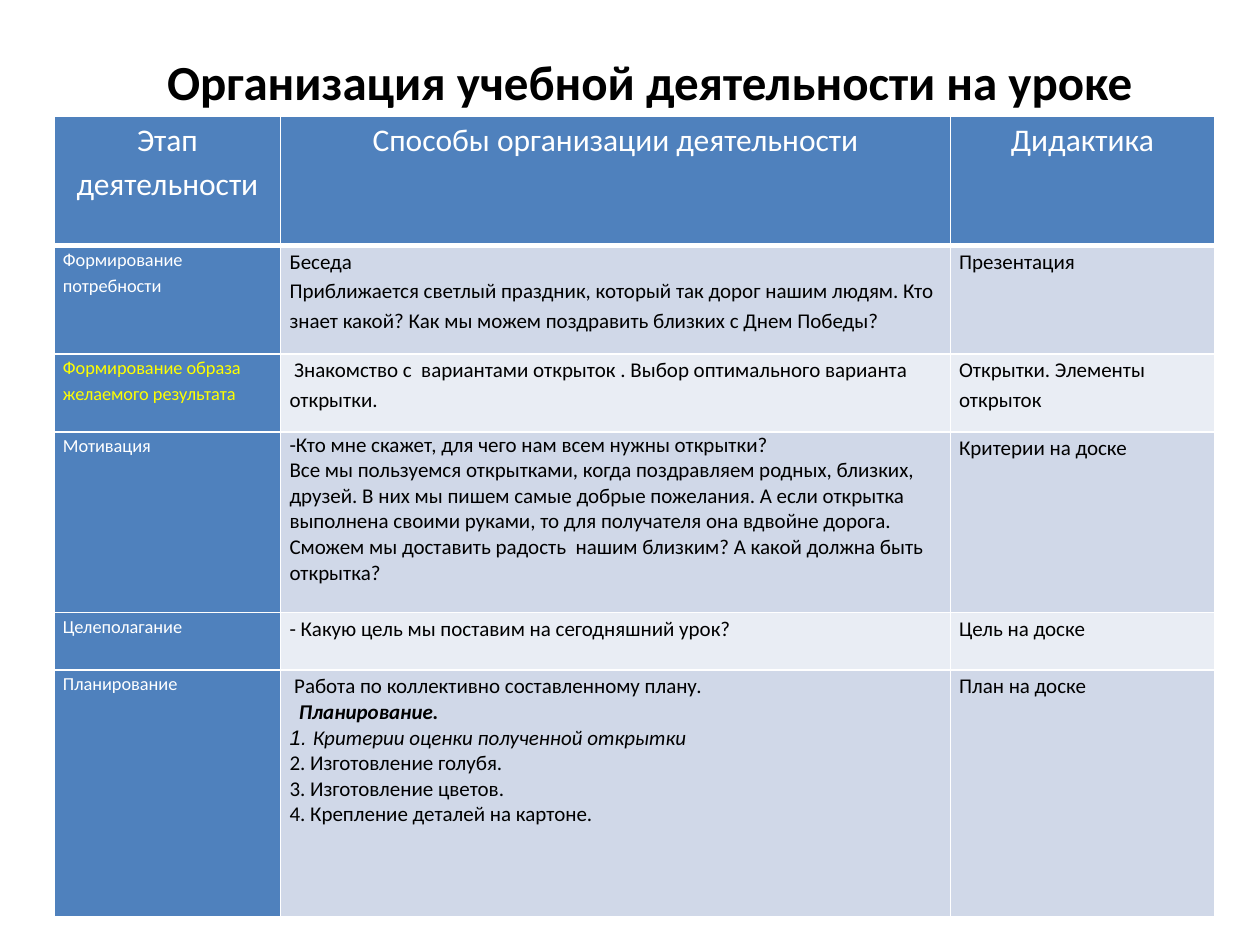
from lxml.etree import SubElement
from pptx import Presentation
from pptx.dml.color import RGBColor
from pptx.enum.text import MSO_AUTO_SIZE as AutoSize, PP_ALIGN as Align
from pptx.oxml.ns import qn
from pptx.util import Inches, Pt

BLACK = RGBColor(0x00, 0x00, 0x00)
WHITE = RGBColor(0xFF, 0xFF, 0xFF)
YELLOW = RGBColor(0xFF, 0xFF, 0x00)
BLUE = RGBColor(0x4F, 0x81, 0xBD)
BANDS = (RGBColor(0xD0, 0xD8, 0xE8), RGBColor(0xE9, 0xED, 0xF4))

SLIDE_SIZE = (Inches(10), Inches(7.5))
TITLE_BOX = (0.98, 0.36, 8.35, 0.57)
TABLE_BOX = (0.43, 0.92, 9.21, 6.36)
COLUMN_SHARES = (1.8, 5.32, 2.1)
ROW_SHARES = (1.03, 0.86, 0.62, 1.43, 0.46, 1.96)
LOOSE, SINGLE = 1.15, 1.0

TITLE = "Организация учебной деятельности на уроке"
HEADINGS = ("Этап деятельности", "Способы организации деятельности", "Дидактика")
STAGES = [
    ("Формирование потребности", WHITE, [
        (LOOSE, "Беседа"),
        (LOOSE, "Приближается светлый праздник, который так дорог нашим людям. "
                "Кто знает какой? Как мы можем поздравить близких с Днем Победы?"),
    ], "Презентация"),
    ("Формирование образа желаемого результата", YELLOW, [
        (LOOSE, " Знакомство с  вариантами открыток . Выбор оптимального варианта открытки."),
    ], "Открытки. Элементы открыток"),
    ("Мотивация", WHITE, [
        (SINGLE, "-Кто мне скажет, для чего нам всем нужны открытки?"),
        (SINGLE, "Все мы пользуемся открытками, когда поздравляем родных, близких, друзей. "
                 "В них мы пишем самые добрые пожелания. А если открытка выполнена своими "
                 "руками, то для получателя она вдвойне дорога. Сможем мы доставить радость  "
                 "нашим близким? А какой должна быть открытка?"),
    ], "Критерии на доске"),
    ("Целеполагание", WHITE, [
        (LOOSE, "- Какую цель мы поставим на сегодняшний урок?"),
    ], "Цель на доске"),
    ("Планирование", WHITE, [
        (LOOSE, " Работа по коллективно составленному плану."),
        (SINGLE, "  ", ("Планирование.", {"bold": True, "italic": True})),
        (SINGLE, ("1. ", {"italic": True, "font": "Arial"}),
         ("Критерии оценки полученной открытки", {"italic": True})),
        (SINGLE, "2. Изготовление голубя."),
        (SINGLE, "3. Изготовление цветов."),
        (SINGLE, "4. Крепление деталей на картоне."),
    ], "План на доске"),
]


def add_text(paragraph, text, size=12, color=BLACK, font="Calibri", bold=False, italic=False):
    """Append one formatted run to a paragraph."""
    run = paragraph.add_run()
    run.text = text
    run.font.size, run.font.name = Pt(size), font
    run.font.bold, run.font.italic = bold, italic
    run.font.color.rgb = color


def draw_border(cell, side, width):
    """Draw a white line on one side of a cell."""
    line = SubElement(cell._tc.get_or_add_tcPr(), qn(f"a:ln{side}"), w=str(Pt(width)))
    SubElement(SubElement(line, qn("a:solidFill")), qn("a:srgbClr"), val=str(WHITE))


def fill_cell(cell, paragraphs, fill, align=Align.LEFT, bottom=1, **style):
    """Write paragraphs of (spacing, runs) in a bordered, filled cell."""
    cell.margin_left = cell.margin_right = Inches(0.07)
    cell.margin_top = cell.margin_bottom = 0
    for side, width in zip("LRTB", (1, 1, 1, bottom)):
        draw_border(cell, side, width)
    cell.fill.solid()
    cell.fill.fore_color.rgb = fill
    frame = cell.text_frame
    for index, (spacing, *runs) in enumerate(paragraphs):
        paragraph = frame.add_paragraph() if index else frame.paragraphs[0]
        paragraph.alignment, paragraph.line_spacing = align, spacing
        for run in runs:
            text, emphasis = (run, {}) if isinstance(run, str) else run
            add_text(paragraph, text, **{**style, **emphasis})


def add_title(slide, box):
    """Place the centred lesson title in the box."""
    title = slide.shapes.add_textbox(*map(Inches, box))
    frame = title.text_frame
    frame.word_wrap, frame.auto_size = True, AutoSize.SHAPE_TO_FIT_TEXT
    frame.paragraphs[0].alignment = Align.CENTER
    add_text(frame.paragraphs[0], TITLE, size=28, bold=True)


def add_stages(slide, box):
    """Place the table of lesson stages in the box."""
    stages = slide.shapes.add_table(
        len(ROW_SHARES), len(COLUMN_SHARES), *map(Inches, box)).table
    stages.horz_banding = False
    for column, share in zip(stages.columns, COLUMN_SHARES):
        column.width = Inches(box[2] * share / sum(COLUMN_SHARES))
    for row, share in zip(stages.rows, ROW_SHARES):
        row.height = Inches(box[3] * share / sum(ROW_SHARES))
    for column, heading in enumerate(HEADINGS):
        fill_cell(stages.cell(0, column), [(LOOSE, heading)], BLUE,
                  align=Align.CENTER, bottom=3, size=18, color=WHITE)
    for row, (stage, color, methods, didactics) in enumerate(STAGES, 1):
        band = BANDS[(row - 1) % 2]
        fill_cell(stages.cell(row, 0), [(LOOSE, stage)], BLUE, size=10.5, color=color)
        fill_cell(stages.cell(row, 1), methods, band)
        fill_cell(stages.cell(row, 2), [(LOOSE, didactics)], band)


def main():
    """Build the slide and save it."""
    deck = Presentation()
    deck.slide_width, deck.slide_height = SLIDE_SIZE
    slide = deck.slides.add_slide(deck.slide_layouts[6])
    add_title(slide, TITLE_BOX)
    add_stages(slide, TABLE_BOX)
    deck.save("out.pptx")


if __name__ == "__main__":
    main()
